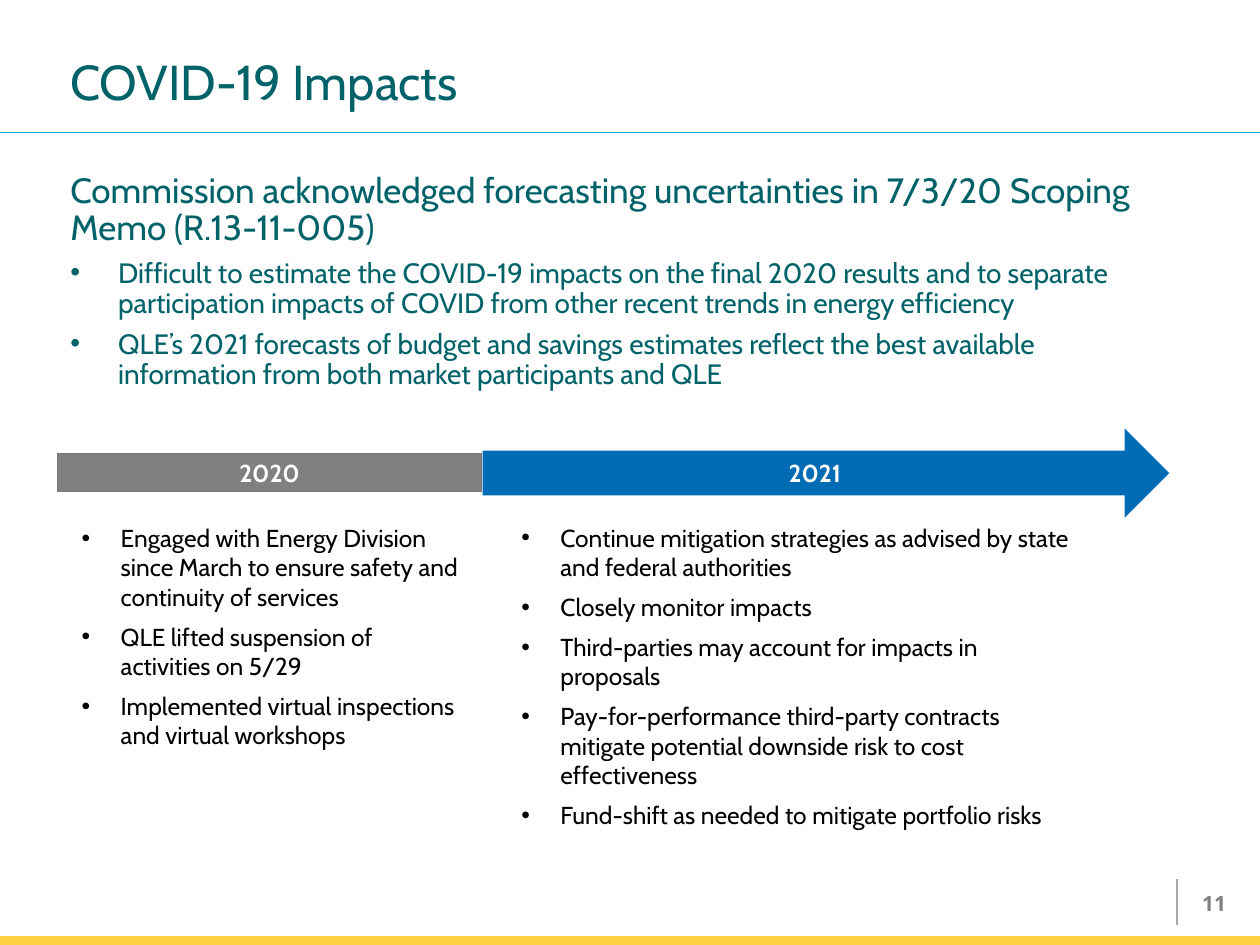
from dataclasses import dataclass

from lxml import etree
from pptx import Presentation
from pptx import util as u
from pptx.dml.color import RGBColor
from pptx.enum import shapes, text
from pptx.oxml.ns import qn

COLORS = {
    "teal": "006269", "cyan": "00A9E0", "yellow": "FED141", "blue": "006CB5",
    "gray": "808080", "edge": "777777", "rule": "A6A6A6",
    "white": "FFFFFF", "black": "000000",
}
COLUMNS, ROWS = 100, 75
LEFT, ALIGN = 4.6, text.PP_ALIGN
MIDDLE, TOP = text.MSO_ANCHOR.MIDDLE, text.MSO_ANCHOR.TOP

deck = Presentation()
deck.slide_width, deck.slide_height = u.Inches(10), u.Inches(7.5)
CELL_W, CELL_H = deck.slide_width / COLUMNS, deck.slide_height / ROWS


@dataclass(frozen=True)
class Area:
    column: float
    row: float
    columns: float
    rows: float

    def emu(self) -> tuple[int, int, int, int]:
        return (round(self.column * CELL_W), round(self.row * CELL_H),
                round(self.columns * CELL_W), round(self.rows * CELL_H))


@dataclass(frozen=True)
class Line:
    words: str
    size: float = 14
    indent: float = 0


@dataclass(frozen=True)
class Rule:
    start: tuple[float, float]
    end: tuple[float, float]
    color: str
    width: float


@dataclass(frozen=True)
class Period:
    year: str
    kind: shapes.MSO_SHAPE
    band: Area
    fill: str
    edge: str | None
    list_area: Area
    actions: tuple[str, ...]


def rgb(name: str) -> RGBColor:
    return RGBColor.from_string(COLORS[name])


def write(frame, lines, color="black", font="Cabin", bold=False, align=ALIGN.LEFT,
          anchor=TOP, spacing=None, after=0) -> None:
    frame.word_wrap = True
    frame.auto_size = text.MSO_AUTO_SIZE.NONE
    frame.vertical_anchor = anchor
    for index, line in enumerate(lines):
        paragraph = frame.paragraphs[0] if index == 0 else frame.add_paragraph()
        if line.indent:
            props = paragraph._p.get_or_add_pPr()
            props.set("marL", str(u.Inches(line.indent)))
            props.set("indent", str(-u.Inches(line.indent)))
            etree.SubElement(props, qn("a:buFont")).set("typeface", "Arial")
            etree.SubElement(props, qn("a:buChar")).set("char", "•")
        paragraph.alignment = align
        paragraph.space_after = u.Pt(after)
        if spacing:
            paragraph.line_spacing = spacing
        run = paragraph.add_run()
        run.text = line.words
        run.font.name, run.font.size, run.font.bold = font, u.Pt(line.size), bold
        run.font.color.rgb = rgb(color)


def draw_text(slide, area: Area, lines, **style) -> None:
    write(slide.shapes.add_textbox(*area.emu()).text_frame, lines, **style)


def draw_shape(slide, kind, area: Area, fill: str, edge: str | None = None):
    shape = slide.shapes.add_shape(kind, *area.emu())
    shape.shadow.inherit = False
    shape.fill.solid()
    shape.fill.fore_color.rgb = rgb(fill)
    if edge:
        shape.line.color.rgb = rgb(edge)
        shape.line.width = u.Pt(0.5)
    else:
        shape.line.fill.background()
    return shape


def draw_rule(slide, rule: Rule) -> None:
    ends = [round(value * cell) for point in (rule.start, rule.end)
            for value, cell in zip(point, (CELL_W, CELL_H))]
    connector = slide.shapes.add_connector(shapes.MSO_CONNECTOR.STRAIGHT, *ends)
    connector.line.color.rgb = rgb(rule.color)
    connector.line.width = u.Pt(rule.width)
    etree.SubElement(connector._element.spPr, qn("a:effectLst"))


def draw_period(slide, period: Period) -> None:
    band = draw_shape(slide, period.kind, period.band, period.fill, period.edge)
    write(band.text_frame, [Line(period.year)], color="white", bold=True,
          align=ALIGN.CENTER, anchor=MIDDLE)
    draw_text(slide, period.list_area,
              [Line(action, indent=0.31) for action in period.actions], after=6)


RULES = (
    Rule((93.4, 69.8), (93.4, 73.4), "rule", 1),
    Rule((0, 10.5), (COLUMNS, 10.5), "cyan", 0.5),
)
SUMMARY = (
    Line("Commission acknowledged forecasting uncertainties in 7/3/20 Scoping "
         "Memo (R.13-11-005)", 20),
    Line("Difficult to estimate the COVID-19 impacts on the final 2020 results and to "
         "separate participation impacts of COVID from other recent trends in energy "
         "efficiency", 16, 0.38),
    Line("QLE’s 2021 forecasts of budget and savings estimates reflect the best available "
         "information from both market participants and QLE", 16, 0.38),
)
PERIODS = (
    Period("2020", shapes.MSO_SHAPE.RECTANGLE, Area(LEFT, 36, 33.6, 3), "gray", "edge",
           Area(5.5, 41, 32.1, 21.5), (
               "Engaged with Energy Division since March to ensure safety and "
               "continuity of services",
               "QLE lifted suspension of activities on 5/29",
               "Implemented virtual inspections and virtual workshops",
           )),
    Period("2021", shapes.MSO_SHAPE.RIGHT_ARROW, Area(38.3, 34, 54.5, 7.1), "blue", None,
           Area(40.4, 41, 45.7, 25.6), (
               "Continue mitigation strategies as advised by state and federal authorities",
               "Closely monitor impacts",
               "Third-parties may account for impacts in proposals",
               "Pay-for-performance third-party contracts mitigate potential downside "
               "risk to cost effectiveness",
               "Fund-shift as needed to mitigate portfolio risks",
           )),
)


def main() -> None:
    slide = deck.slides.add_slide(deck.slide_layouts[5])
    title = slide.shapes.title
    title.left, title.top, title.width, title.height = Area(LEFT, 3.9, 86.2, 5.6).emu()
    write(title.text_frame, [Line("COVID-19 Impacts", 28)], color="teal",
          anchor=MIDDLE, spacing=0.9)
    for rule in RULES:
        draw_rule(slide, rule)
    draw_shape(slide, shapes.MSO_SHAPE.RECTANGLE, Area(0, 74.3, COLUMNS, 0.7), "yellow")
    draw_text(slide, Area(92.7, 69.7, 5.6, 4), [Line("11", 12)], color="gray",
              font="Open Sans", bold=True, align=ALIGN.RIGHT, anchor=MIDDLE)
    draw_text(slide, Area(LEFT, 12.5, 90, 19.7), SUMMARY, color="teal",
              anchor=MIDDLE, spacing=0.9, after=6)
    for period in PERIODS:
        draw_period(slide, period)
    deck.save("out.pptx")


if __name__ == "__main__":
    main()
